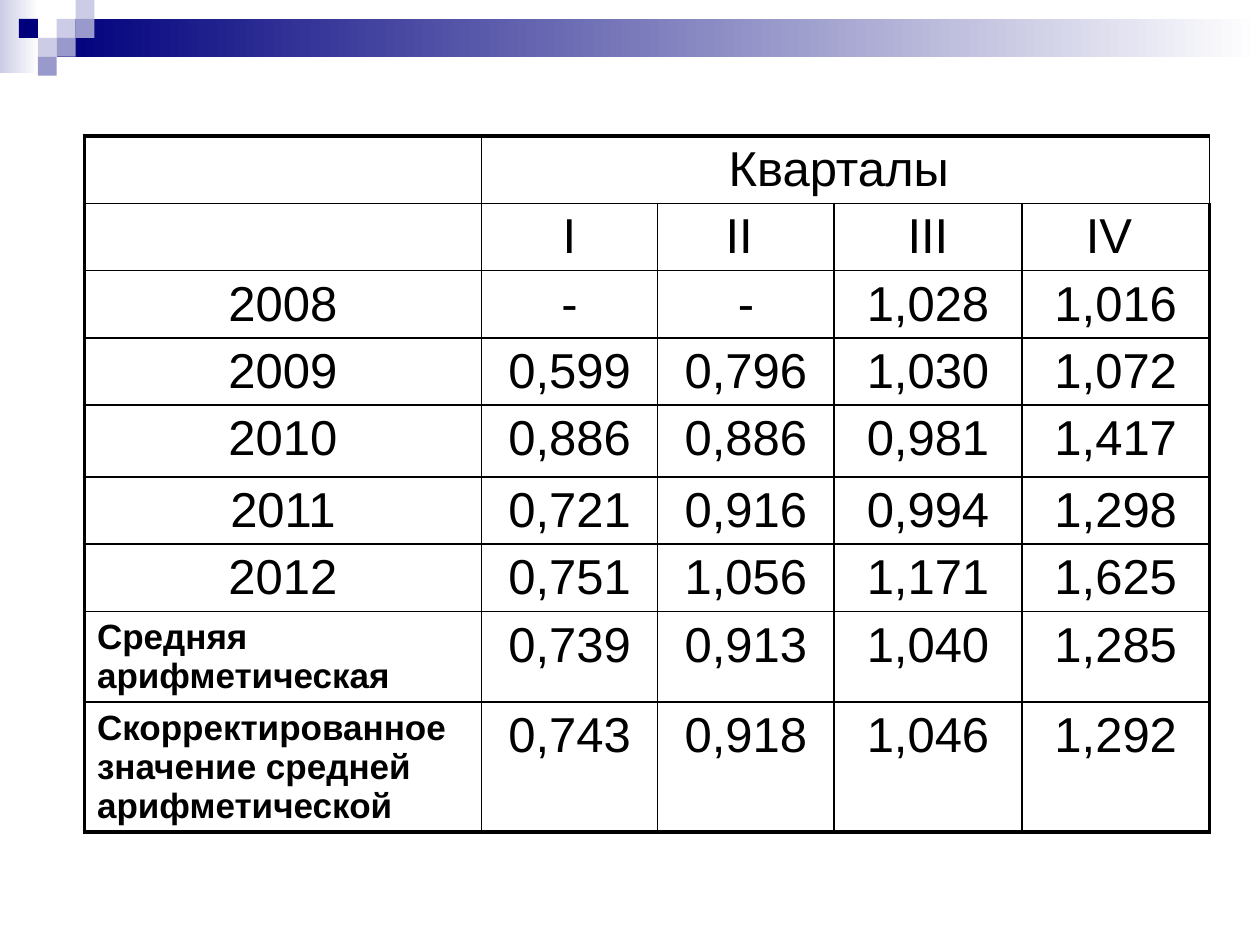
from pptx import Presentation
from pptx.dml.color import RGBColor
from pptx.enum.shapes import MSO_SHAPE as Kind
from pptx.enum.text import PP_ALIGN as Align
from pptx.oxml import parse_xml
from pptx.oxml.ns import nsdecls
from pptx.util import Inches, Pt

NAVY = RGBColor(0x00, 0x00, 0x7D)
BLUE = RGBColor(0x99, 0x99, 0xCC)
PALE = RGBColor(0xCC, 0xCC, 0xE6)
WHITE = RGBColor(0xFF, 0xFF, 0xFF)
BLACK = RGBColor(0x00, 0x00, 0x00)

deck = Presentation()
deck.slide_width, deck.slide_height = Inches(10), Inches(7.5)
slide = deck.slides.add_slide(deck.slide_layouts[6])


def add_box(x, y, w, h, color, fade=False):
    box = slide.shapes.add_shape(Kind.RECTANGLE, Inches(x), Inches(y), Inches(w), Inches(h))
    box.shadow.inherit = False
    box.line.fill.background()
    if fade:
        box.fill.gradient()
        box.fill.gradient_angle = 0
        for stop, tint in zip(box.fill.gradient_stops, (color, WHITE)):
            stop.color.rgb = tint
    else:
        box.fill.solid()
        box.fill.fore_color.rgb = color


def set_edge(cell, side, width):
    return parse_xml(
        f'<a:ln{side} {nsdecls("a")} w="{Pt(width)}"><a:solidFill>'
        f'<a:srgbClr val="{BLACK}"/></a:solidFill></a:ln{side}>')


# Header bands and checker squares
add_box(0, 0, 0.31, 0.58, PALE, fade=True)
add_box(0.45, 0.15, 9.55, 0.3, NAVY, fade=True)
STEP = 0.15
squares = [(3, 1, PALE), (4, 0, PALE), (4, 1, BLUE), (2, 2, PALE),
           (1, 1, NAVY), (3, 2, BLUE), (2, 3, BLUE)]
for col, row, color in squares:
    add_box(col * STEP, row * STEP, STEP, STEP, color)

# Table
rows = [
    ["", "Кварталы ", "", "", ""],
    ["", "I", "II ", "III", "IV "],
    ["2008", "-", "-", "1,028", "1,016"],
    ["2009", "0,599", "0,796", "1,030", "1,072"],
    ["2010", "0,886", "0,886", "0,981", "1,417"],
    ["2011", "0,721", "0,916", "0,994", "1,298"],
    ["2012", "0,751", "1,056", "1,171", "1,625"],
    ["Средняя арифметическая", "0,739", "0,913", "1,040", "1,285"],
    ["Скорректированное значение средней арифметической",
     "0,743", "0,918", "1,046", "1,292"],
]
widths = [3.15, 1.4, 1.4, 1.49, 1.49]
heights = [0.53] * 4 + [0.57] + [0.53] * 2 + [0.72, 1.03]
last_row, last_col = len(rows) - 1, len(widths) - 1

frame = slide.shapes.add_table(len(rows), len(widths), Inches(0.67), Inches(1.08),
                               Inches(sum(widths)), Inches(sum(heights)))
table = frame.table
table.first_row = table.horz_banding = False
for col, width in zip(table.columns, widths):
    col.width = Inches(width)
for row, height in zip(table.rows, heights):
    row.height = Inches(height)
table.cell(0, 1).merge(table.cell(0, last_col))

for r, texts in enumerate(rows):
    for c, text in enumerate(texts):
        cell = table.cell(r, c)
        cell.fill.background()

        # Thick outer frame, thin inner lines
        outer = {"L": c == 0, "R": c == last_col, "T": r == 0, "B": r == last_row}
        props = cell._tc.get_or_add_tcPr()
        for i, (side, thick) in enumerate(outer.items()):
            props.insert(i, set_edge(cell, side, 2.25 if thick else 1))

        if not text:
            continue
        label = c == 0 and r >= last_row - 1
        cell.text_frame.text = text
        para = cell.text_frame.paragraphs[0]
        para.alignment = Align.LEFT if label else Align.CENTER
        font = para.runs[0].font
        font.name = "Arial"
        font.size = Pt(20 if label else 28)
        font.bold = label
        font.color.rgb = BLACK

deck.save("out.pptx")
